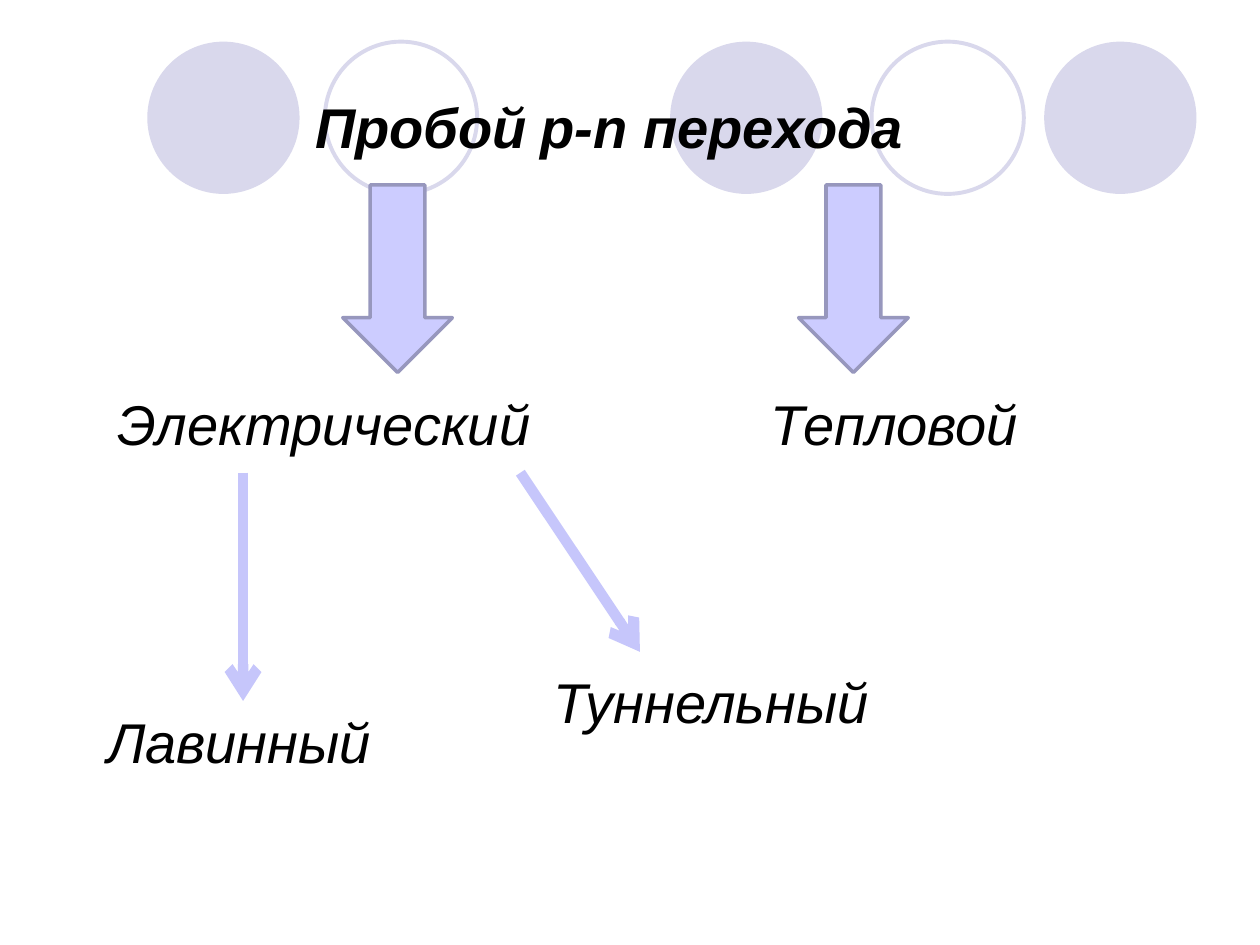
from lxml import etree
from pptx import Presentation
from pptx import util as u
from pptx.dml import color
from pptx.enum import shapes, text
from pptx.oxml import ns

LILAC, PALE = "CCCCFF", "D9D8EC"


def rgb(value):
    """Turn a hex string into a colour."""
    return color.RGBColor.from_string(value)


def cm(*lengths):
    """Turn numbers into centimetre lengths."""
    return [u.Cm(length) for length in lengths]


def write(para, words, size=32, bold=False, italic=True, ink="000000", font="Arial"):
    """Add one formatted span to a paragraph."""
    span = para.add_run()
    span.text = words
    span.font.size = u.Pt(size)
    span.font.bold = bold
    span.font.italic = italic
    span.font.name = font
    span.font.color.rgb = rgb(ink)


def first_para(box):
    """Set up the frame of a text shape and return its left-aligned paragraph."""
    frame = box.text_frame
    frame.word_wrap = True
    frame.auto_size = text.MSO_AUTO_SIZE.NONE
    frame.vertical_anchor = text.MSO_ANCHOR.TOP
    para = frame.paragraphs[0]
    para.alignment = text.PP_ALIGN.LEFT
    return para


def add_preset(page, kind, box, fill=None, line=None, weight=2.25):
    """Add a preset shape with an optional fill and outline."""
    shape = page.shapes.add_shape(kind, *cm(*box))
    shape.shadow.inherit = False
    if fill:
        shape.fill.solid()
        shape.fill.fore_color.rgb = rgb(fill)
    else:
        shape.fill.background()
    if line:
        shape.line.color.rgb = rgb(line)
        shape.line.width = u.Pt(weight)
    else:
        shape.line.fill.background()
    return shape


def add_circles(page, left, top, size):
    """Draw the band of filled and outlined circles."""
    for offset, filled in ((10.54, True), (18.08, True), (0, True), (14.6, False), (3.58, False)):
        style = {"fill": PALE} if filled else {"line": PALE}
        add_preset(page, shapes.MSO_SHAPE.OVAL, (left + offset, top, size, size), **style)


def add_title(page, left, top, width, height):
    """Fill the title placeholder and bring it in front of the circles."""
    title = page.shapes.title
    title.left, title.top, title.width, title.height = cm(left, top, width, height)
    para = first_para(title)
    write(para, "Пробой", bold=True)
    write(para, " ", size=28, bold=True)
    write(para, "p-n перехода", bold=True)
    title.element.getparent().append(title.element)


def add_label(page, words, left, top, width, height=1.63):
    """Add the name of one kind of breakdown."""
    box = page.shapes.add_textbox(*cm(left, top, width, height))
    write(first_para(box), words)


def add_arrow(page, left, top, across, down):
    """Draw a thick line with an open arrowhead at its end."""
    line = page.shapes.add_connector(
        shapes.MSO_CONNECTOR.STRAIGHT, *cm(left, top, left + across, top + down))
    line.line.color.rgb = rgb("C6C6FB")
    line.line.width = u.Pt(6)
    outline = line.line._get_or_add_ln()
    etree.SubElement(outline, ns.qn("a:tailEnd"), type="arrow")
    etree.SubElement(outline.getparent(), ns.qn("a:effectLst"))


def add_branches(page, left, top):
    """Draw the two main branches with their block arrows."""
    for offset in (0, 9.19):
        add_preset(page, shapes.MSO_SHAPE.DOWN_ARROW, (left + offset, top, 2.21, 3.78),
                   fill=LILAC, line="9797BD", weight=2)
    add_label(page, "Электрический", left - 4.8, top + 3.99, 8.99)
    add_label(page, "Тепловой", left + 8.38, top + 3.99, 7.39)


def add_subtypes(page, left, top):
    """Draw the two electrical subtypes with their line arrows."""
    add_label(page, "Лавинный", left, top + 4.6, 6.6)
    add_label(page, "Туннельный", left + 8.99, top + 3.81, 7.8)
    add_arrow(page, left + 2.99, top, 0, 4.6)
    add_arrow(page, left + 8.58, top, 2.41, 3.61)


def main():
    """Build the deck and save it."""
    deck = Presentation()
    deck.slide_width, deck.slide_height = cm(25.4, 19.05)
    page = deck.slides.add_slide(deck.slide_layouts[5])
    add_circles(page, 2.97, 0.84, 3.07)
    add_title(page, 6.1, 1.73, 13.21, 1.63)
    add_branches(page, 6.91, 3.73)
    add_subtypes(page, 1.91, 9.53)
    deck.save("out.pptx")


if __name__ == "__main__":
    main()
